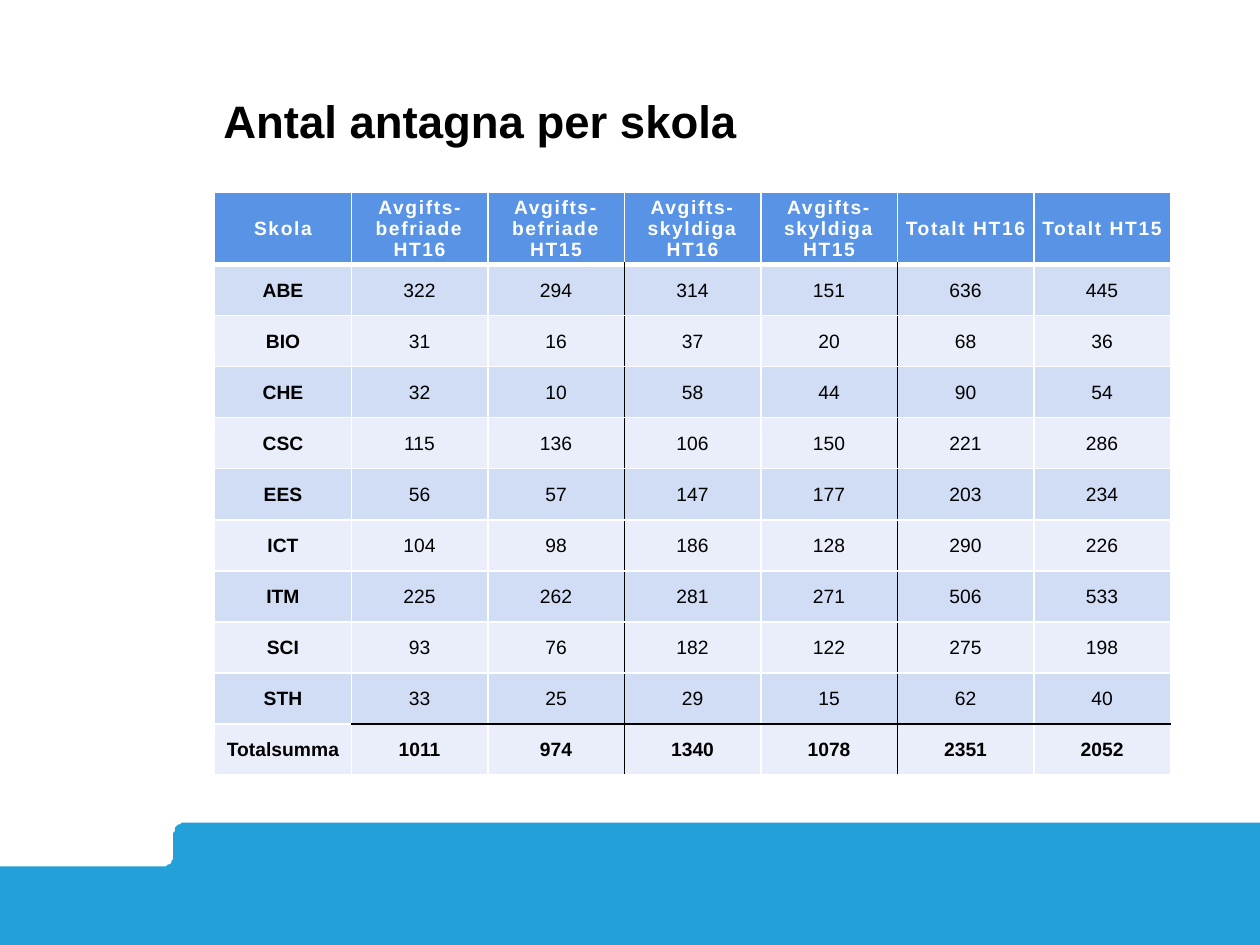
from math import cos, radians, sin

from lxml.etree import SubElement
from pptx import Presentation
from pptx.dml.color import RGBColor
from pptx.enum.text import MSO_ANCHOR as Anchor, MSO_AUTO_SIZE as AutoSize, PP_ALIGN as Align
from pptx.oxml.ns import qn
from pptx.util import Pt

BLACK = RGBColor(0x00, 0x00, 0x00)
WHITE = RGBColor(0xFF, 0xFF, 0xFF)
BAND_BLUE = RGBColor(0x24, 0xA0, 0xD8)
HEADER_BLUE = RGBColor(0x58, 0x93, 0xE5)
ROW_DARK = RGBColor(0xD1, 0xDC, 0xF5)
ROW_LIGHT = RGBColor(0xEA, 0xEE, 0xFA)
FONT = "Arial"

HEADERS = [
    "Skola", "Avgifts-\nbefriade HT16", "Avgifts-befriade HT15",
    "Avgifts-skyldiga HT16", "Avgifts-skyldiga HT15", "Totalt HT16", "Totalt HT15",
]
SCHOOLS = [
    ("ABE", 322, 294, 314, 151, 636, 445),
    ("BIO", 31, 16, 37, 20, 68, 36),
    ("CHE", 32, 10, 58, 44, 90, 54),
    ("CSC", 115, 136, 106, 150, 221, 286),
    ("EES", 56, 57, 147, 177, 203, 234),
    ("ICT", 104, 98, 186, 128, 290, 226),
    ("ITM", 225, 262, 281, 271, 506, 533),
    ("SCI", 93, 76, 182, 122, 275, 198),
    ("STH", 33, 25, 29, 15, 62, 40),
    ("Totalsumma", 1011, 974, 1340, 1078, 2351, 2052),
]
GROUP_ENDS = (2, 4)  # columns followed by a black rule
HEADER_HEIGHT = 41.6


def arc(center_x, center_y, radius, start, end, steps=8):
    """Points on a circle, with angles in degrees clockwise from the right."""
    angles = [radians(start + (end - start) * i / steps) for i in range(steps + 1)]
    return [(center_x + radius * cos(a), center_y + radius * sin(a)) for a in angles]


def add_footer_band(slide, left, top, width, height):
    """Blue band whose left part steps down with two rounded corners."""
    step_x, step_y, radius = left + 99.4, top + 24.6, 6
    right, bottom = left + width, top + height
    outline = [
        (left, step_y),
        *arc(step_x - radius, step_y - radius, radius, 90, 0),
        *arc(step_x + radius, top + radius, radius, 180, 270),
        (right, top), (right, bottom), (left, bottom),
    ]
    builder = slide.shapes.build_freeform(*outline[0], scale=float(Pt(1)))
    builder.add_line_segments(outline[1:], close=True)
    band = builder.convert_to_shape()
    band.shadow.inherit = False
    band.fill.solid()
    band.fill.fore_color.rgb = BAND_BLUE
    band.line.fill.background()


def place_title(slide, left, top, width, height):
    title = slide.shapes.title
    title.left, title.top, title.width, title.height = map(Pt, (left, top, width, height))
    frame = title.text_frame
    frame.text = "Antal antagna per skola"
    frame.auto_size = AutoSize.NONE
    frame.word_wrap = True
    frame.vertical_anchor = Anchor.BOTTOM
    frame.margin_left = frame.margin_top = frame.margin_right = frame.margin_bottom = 0
    heading = frame.paragraphs[0]
    heading.alignment = Align.LEFT
    heading.line_spacing = Pt(30)
    style_font(heading.font, 26, BLACK, True)


def style_font(font, size, color, bold):
    font.name = FONT
    font.size = Pt(size)
    font.bold = bold
    font.color.rgb = color


def set_border(cell, side, color, width):
    line = SubElement(cell._tc.get_or_add_tcPr(), qn(f"a:ln{side}"), w=str(Pt(width)))
    fill = SubElement(line, qn("a:solidFill"))
    SubElement(fill, qn("a:srgbClr"), val=str(color))


def rule_cell(cell, row, column, total_row):
    """White grid, black rules after column groups and above the totals."""
    sides = {side: (WHITE, 1) for side in "LRTB"}
    if row == 0:
        sides["B"] = (WHITE, 3)
    else:
        if row == 1:
            sides["T"] = (WHITE, 3)
        if column in GROUP_ENDS:
            sides["R"] = (BLACK, 1)
        if column - 1 in GROUP_ENDS:
            sides["L"] = (BLACK, 1)
    if column > 0 and row == total_row - 1:
        sides["B"] = (BLACK, 1)
    if column > 0 and row == total_row:
        sides["T"] = (BLACK, 1)
    for side, (color, width) in sides.items():
        set_border(cell, side, color, width)


def fill_cell(cell, text, row, bold):
    is_header = row == 0
    cell.fill.solid()
    cell.fill.fore_color.rgb = HEADER_BLUE if is_header else (ROW_DARK if row % 2 else ROW_LIGHT)
    cell.vertical_anchor = Anchor.MIDDLE
    cell.margin_left = cell.margin_top = cell.margin_right = Pt(0.7)
    cell.margin_bottom = 0
    cell.text = str(text)
    for paragraph in cell.text_frame.paragraphs:
        paragraph.alignment = Align.CENTER
        style_font(paragraph.font, 11, WHITE if is_header else BLACK, bold)
        if is_header:
            paragraph._p.pPr.find(qn("a:defRPr")).set("spc", "90")


def add_admissions_table(slide, left, top, width, height):
    rows = [HEADERS, *SCHOOLS]
    total_row = len(rows) - 1
    table = slide.shapes.add_table(
        len(rows), len(HEADERS), Pt(left), Pt(top), Pt(width), Pt(height)).table
    table.horz_banding = False
    for column in table.columns:
        column.width = Pt(width / len(HEADERS))
    for row in table.rows:
        row.height = Pt((height - HEADER_HEIGHT) / len(SCHOOLS))
    table.rows[0].height = Pt(HEADER_HEIGHT)
    for r, values in enumerate(rows):
        for c, value in enumerate(values):
            cell = table.cell(r, c)
            rule_cell(cell, r, c, total_row)
            fill_cell(cell, value, r, bold=c == 0 or r in (0, total_row))


def main():
    presentation = Presentation()
    presentation.slide_width, presentation.slide_height = Pt(720), Pt(540)
    slide = presentation.slides.add_slide(presentation.slide_layouts[5])
    add_footer_band(slide, 0, 470.2, 720, 71.2)
    place_title(slide, 127.6, 31.6, 546.4, 52.8)
    add_admissions_table(slide, 122.7, 109.6, 546.2, 333.4)
    presentation.save("out.pptx")


if __name__ == "__main__":
    main()
